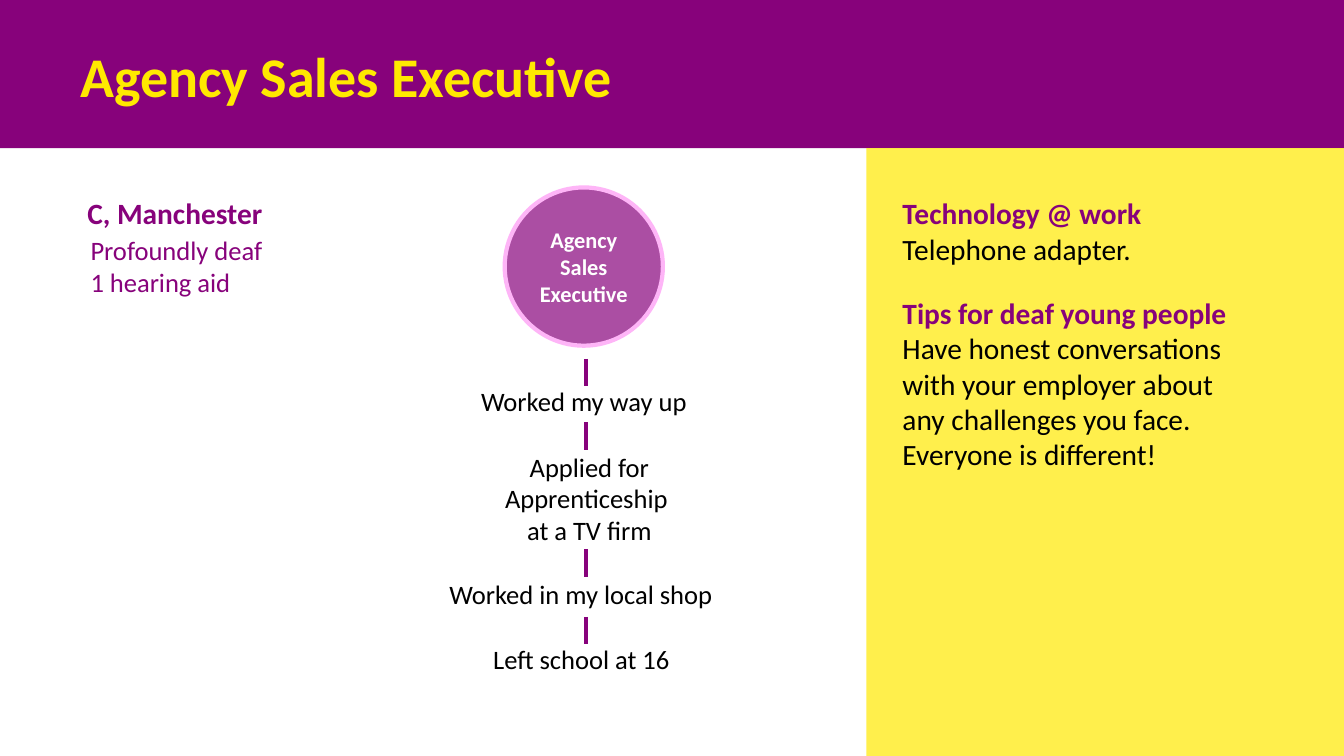
from lxml import etree
from pptx import Presentation
from pptx.dml.color import RGBColor
from pptx.enum import shapes, text
from pptx.oxml.ns import qn
from pptx.util import Inches, Pt

PURPLE, YELLOW, BLACK, WHITE = "87027B", "FFE900", "000000", "FFFFFF"
LEFT, MID = text.PP_ALIGN.LEFT, text.PP_ALIGN.CENTER
TOP, CENTRE = text.MSO_ANCHOR.TOP, text.MSO_ANCHOR.MIDDLE
AXIS = 5.82


def paint(color, code):
    color.rgb = RGBColor.from_string(code)


def write(frame, lines, size=19, color=BLACK, bold=False, align=LEFT,
          anchor=TOP, inset=(0.1, 0.05), head=None):
    """Fill a frame, one paragraph a line; head colours a bold first line."""
    frame.word_wrap = True
    frame.vertical_anchor = anchor
    frame.margin_left = frame.margin_right = Inches(inset[0])
    frame.margin_top = frame.margin_bottom = Inches(inset[1])
    for i, line in enumerate(lines):
        para = frame.paragraphs[0] if i == 0 else frame.add_paragraph()
        para.text = line
        para.alignment = align
        lead = head and i == 0
        for run in para.runs:
            run.font.name = "Calibri"
            run.font.size = Pt(size)
            run.font.bold = bool(bold or lead)
            paint(run.font.color, head if lead else color)


def add_text(slide, at, *lines, **style):
    box = slide.shapes.add_textbox(*map(Inches, at))
    write(box.text_frame, lines, **style)


def add_form(slide, kind, at, fill, edge=None, alpha=None):
    form = slide.shapes.add_shape(kind, *map(Inches, at))
    form.shadow.inherit = False
    form.fill.solid()
    paint(form.fill.fore_color, fill)
    if edge:
        paint(form.line.color, edge)
        form.line.width = Pt(3)
    else:
        form.line.fill.background()
    if alpha:
        tint = form.fill._xPr.find(".//" + qn("a:srgbClr"))
        etree.SubElement(tint, qn("a:alpha"), val=str(alpha * 1000))
    return form


def add_dash(slide, top):
    """Draw a short upright link on the career axis."""
    dash = slide.shapes.add_connector(
        shapes.MSO_CONNECTOR.STRAIGHT,
        *map(Inches, (AXIS, top, AXIS, top + 0.27)))
    paint(dash.line.color, PURPLE)
    dash.line.width = Pt(3)
    etree.SubElement(dash._element.spPr, qn("a:effectLst"))


def add_career(slide):
    job = add_form(slide, shapes.MSO_SHAPE.OVAL, (5.01, 1.86, 1.57, 1.57),
                   "AB4EA3", edge="FEB5F7")
    write(job.text_frame, ["Agency Sales Executive"], size=16, color=WHITE,
          bold=True, align=MID, anchor=CENTRE, inset=(0, 0))
    steps = [
        (3.56, (4.38, 3.77, 2.83, 0.42), "Worked my way up"),
        (4.19, (4.53, 4.42, 2.64, 1.06),
         "Applied for Apprenticeship \vat a TV firm"),
        (5.45, (4.35, 5.68, 2.83, 0.42), "Worked in my local shop"),
        (6.12, (3.87, 6.33, 3.8, 0.42), "Left school at 16"),
    ]
    for top, at, step in steps:
        add_dash(slide, top)
        add_text(slide, at, step, align=MID)


def main():
    deck = Presentation()
    deck.slide_width, deck.slide_height = Inches(13.34), Inches(7.5)
    slide = deck.slides.add_slide(deck.slide_layouts[6])
    rect = shapes.MSO_SHAPE.RECTANGLE

    add_form(slide, rect, (0, 0, 13.34, 1.47), PURPLE)
    add_form(slide, rect, (8.6, 1.47, 4.74, 6.03), YELLOW, alpha=70)
    add_text(slide, (0.67, 0.35, 9.03, 0.79), "Agency Sales Executive",
             size=40, color=YELLOW, bold=True, anchor=CENTRE,
             inset=(0.13, 0.07))

    add_text(slide, (0.77, 1.89, 4.23, 0.45), "C, Manchester",
             size=21, color=PURPLE, bold=True)
    add_text(slide, (0.8, 2.27, 2.71, 0.74), "Profoundly deaf",
             "1 hearing aid", color=PURPLE)
    add_career(slide)

    add_text(slide, (8.86, 1.89, 4.4, 0.81), "Technology @ work",
             "Telephone adapter.", size=21, head=PURPLE)
    add_text(slide, (8.86, 2.88, 4.4, 2.22), "Tips for deaf young people",
             "Have honest conversations \vwith your employer about",
             "any challenges you face.", "Everyone is different!",
             size=21, head=PURPLE)
    deck.save("out.pptx")


if __name__ == "__main__":
    main()
